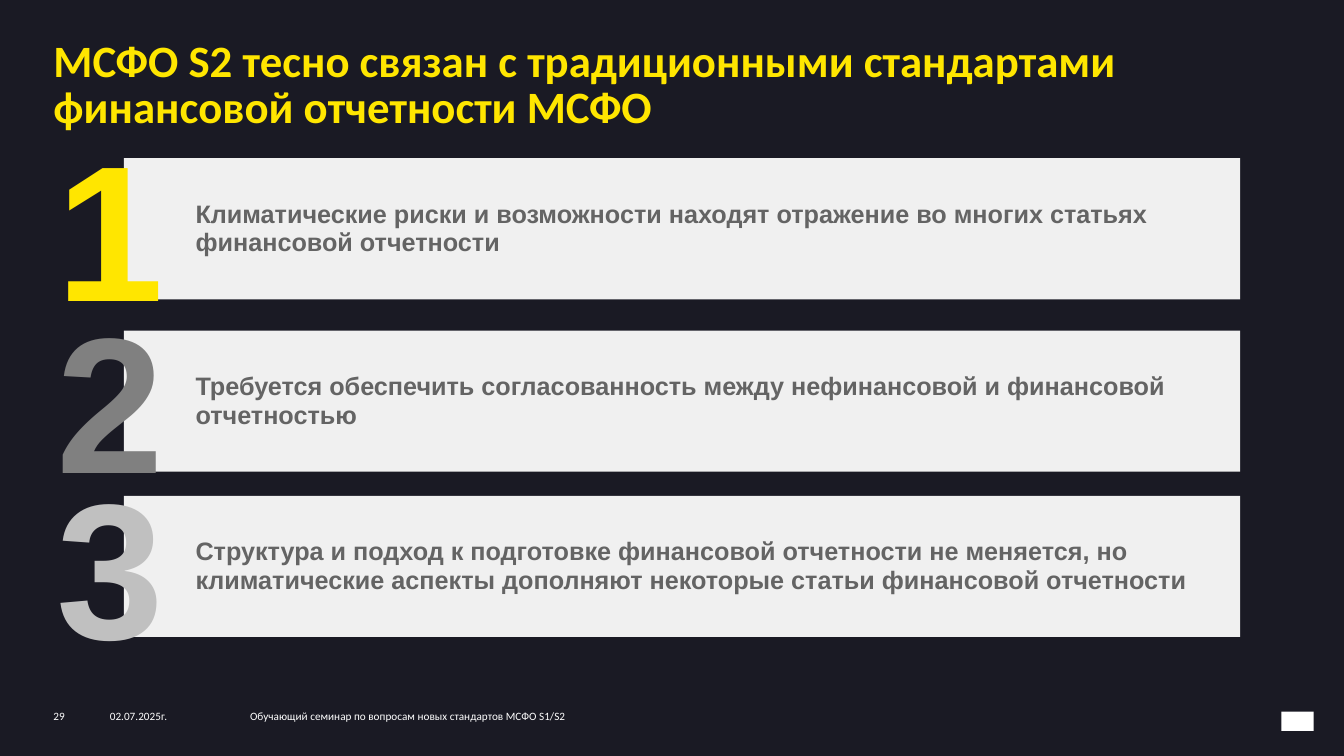
from dataclasses import dataclass

from pptx import Presentation, util as u
from pptx.dml.color import RGBColor
from pptx.enum import shapes, text


@dataclass(frozen=True)
class Theme:
    back: str = "1A1A24"
    accent: str = "FFE600"
    light: str = "FFFFFF"
    panel: str = "F0F0F0"
    body: str = "646464"
    digits: tuple = ("FFE600", "808080", "C0C0C0")
    head: str = "Calibri"
    main: str = "Arial"
    title: int = 32
    copy: int = 18
    small: int = 8
    huge: int = 138


ROWS = [
    (1.57, "Климатические риски и возможности находят отражение во многих статьях "
           "финансовой отчетности"),
    (3.28, "Требуется обеспечить согласованность между нефинансовой и финансовой "
           "отчетностью"),
    (4.92, "Структура и подход к подготовке финансовой отчетности не меняется, но "
           "климатические аспекты дополняют некоторые статьи финансовой отчетности"),
]
FOOTER = [
    (0.53, 0.56, "29"),
    (1.09, 1.4, "02.07.2025г."),
    (2.48, 4.18, "Обучающий семинар по вопросам новых стандартов МСФО S1/S2"),
]


def write(shape, words, *, size, color, font, bold=False, align=text.PP_ALIGN.LEFT,
          anchor=text.MSO_ANCHOR.TOP, inset=(0, 0, 0, 0), line=None, after=0, wrap=True):
    """Fill a shape with one paragraph; inset is left, top, right, bottom in inches."""
    frame = shape.text_frame
    frame.word_wrap = wrap
    frame.vertical_anchor = anchor
    (frame.margin_left, frame.margin_top,
     frame.margin_right, frame.margin_bottom) = map(u.Inches, inset)
    para = frame.paragraphs[0]
    para.alignment = align
    para.line_spacing = line
    para.space_after = u.Pt(after)
    run = para.add_run()
    run.text = words
    run.font.name = font
    run.font.size = u.Pt(size)
    run.font.bold = bold
    run.font.color.rgb = RGBColor.from_string(color)


class Deck:
    def __init__(self, theme):
        self.theme = theme
        self.show = Presentation()
        self.show.slide_width = u.Inches(13.33)
        self.show.slide_height = u.Inches(7.5)
        self.slide = self.show.slides.add_slide(self.show.slide_layouts[6])
        fill = self.slide.background.fill
        fill.solid()
        fill.fore_color.rgb = RGBColor.from_string(theme.back)

    def label(self, box, words, **style):
        shape = self.slide.shapes.add_textbox(*map(u.Inches, box))
        write(shape, words, **style)
        return shape

    def block(self, box, color):
        shape = self.slide.shapes.add_shape(
            shapes.MSO_SHAPE.RECTANGLE, *map(u.Inches, box))
        shape.shadow.inherit = False
        shape.fill.solid()
        shape.fill.fore_color.rgb = RGBColor.from_string(color)
        shape.line.fill.background()
        return shape

    def panel(self, box, words):
        look = self.theme
        write(self.block(box, look.panel), words, size=look.copy, color=look.body,
              font=look.main, bold=True, anchor=text.MSO_ANCHOR.MIDDLE,
              inset=(0.71, 0.08, 0.12, 0.08), line=0.95, after=8)

    def digit(self, box, value, color):
        look = self.theme
        shape = self.label(box, str(value), size=look.huge, color=color, font=look.main,
                           bold=True, align=text.PP_ALIGN.CENTER,
                           anchor=text.MSO_ANCHOR.MIDDLE, line=0.85, after=6, wrap=False)
        shape.text_frame.auto_size = text.MSO_AUTO_SIZE.SHAPE_TO_FIT_TEXT


def main():
    look = Theme()
    deck = Deck(look)
    deck.block((12.71, 7.06, 0.32, 0.19), look.light)
    deck.label((0.53, 0.41, 12.28, 0.51),
               "МСФО S2 тесно связан с традиционными стандартами финансовой отчетности МСФО",
               size=look.title, color=look.accent, font=look.head, bold=True, line=0.85)
    for left, width, words in FOOTER:
        deck.label((left, 7.04, width, 0.13), words,
                   size=look.small, color=look.light, font=look.head)
    for value, ((top, words), color) in enumerate(zip(ROWS, look.digits), 1):
        deck.panel((1.23, top, 11.07, 1.4), words)
        deck.digit((0.55, top - 0.15, 1.08, 1.97), value, color)
    deck.show.save("out.pptx")


if __name__ == "__main__":
    main()
